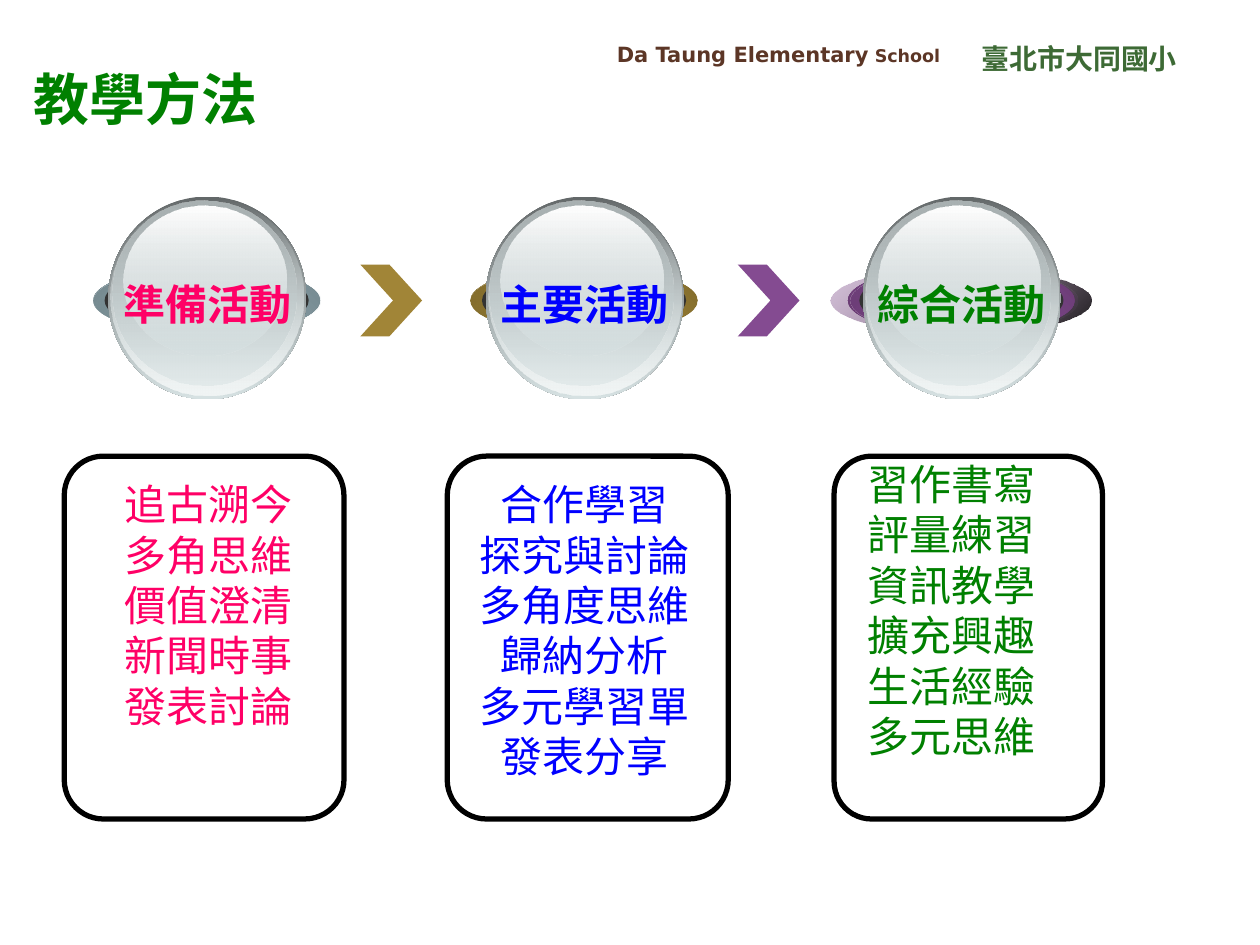
"""Build the teaching methods slide: three glossy stages above three panels of activities."""
from dataclasses import dataclass
from typing import NamedTuple

from lxml import etree
from pptx import Presentation
from pptx.dml.color import RGBColor
from pptx.enum.shapes import MSO_SHAPE
from pptx.enum.text import MSO_ANCHOR, MSO_AUTO_SIZE, PP_ALIGN
from pptx.oxml.ns import qn
from pptx.util import Inches, Pt

ELLIPSE, CHEVRON, ROUNDED = MSO_SHAPE.OVAL, MSO_SHAPE.CHEVRON, MSO_SHAPE.ROUNDED_RECTANGLE
LEFT, CENTER, RIGHT = PP_ALIGN.LEFT, PP_ALIGN.CENTER, PP_ALIGN.RIGHT
TOP, MIDDLE = MSO_ANCHOR.TOP, MSO_ANCHOR.MIDDLE
NO_FIT, GROW = MSO_AUTO_SIZE.NONE, MSO_AUTO_SIZE.SHAPE_TO_FIT_TEXT

COLUMNS, ROWS = 100, 75
SLIDE_WIDTH, SLIDE_HEIGHT = Inches(10), Inches(7.5)
STAGE_LEFT, STAGE_PITCH = 8.6, 29.95
RING_TOP, RING_HEIGHT = 21.2, 5.3
PANEL_TOP, PANEL_HEIGHT = 36.2, 28.8


@dataclass(frozen=True)
class Theme:
    """Colours, fonts and type sizes of the slide."""
    green: str = "008000"
    pink: str = "FF0066"
    blue: str = "0000FF"
    brown: str = "5C3626"
    moss: str = "3D6A35"
    gold: str = "A18537"
    purple: str = "844B91"
    steel: str = "90A8B0"
    glass: str = "D6E1E2"
    white: str = "FFFFFF"
    black: str = "000000"
    core: str = "333333"
    cjk: str = "Noto Sans CJK SC"
    sans: str = "DejaVu Sans"
    arial: str = "Arial"
    serif: str = "Times New Roman"
    title_size: int = 32
    body_size: int = 24
    school_size: int = 16
    english_size: int = 12
    small_size: int = 10
    leading: float = 1.2


THEME = Theme()


class Box(NamedTuple):
    """A place on the slide in grid columns and rows."""
    left: float
    top: float
    width: float
    height: float

    def lengths(self) -> tuple:
        """Return left, top, width and height in slide units."""
        across, down = SLIDE_WIDTH / COLUMNS, SLIDE_HEIGHT / ROWS
        return tuple(round(value * unit) for value, unit in zip(self, (across, down) * 2))


class Stop(NamedTuple):
    """A gradient stop with its place and opacity in percent."""
    place: int
    color: str
    opacity: int = 100


class Gradient(NamedTuple):
    """A linear gradient, its angle clockwise."""
    angle: int
    stops: tuple


class Run(NamedTuple):
    """A piece of text in one style."""
    text: str
    color: str
    size: int = THEME.body_size
    font: str = THEME.serif
    bold: bool = False


class Layer(NamedTuple):
    """An ellipse placed from the left edge of its stage."""
    offset: float
    top: float
    width: float
    height: float
    fill: object


class Stage(NamedTuple):
    """A teaching stage, its ring and its panel."""
    name: str
    ink: str
    accent: str
    dark: str
    shade: str
    halo: tuple
    halo_end: Stop
    shade_offset: float
    panel: tuple
    body: Box
    lines: tuple


STAGES = (
    Stage("準備活動", THEME.pink, THEME.steel, "6E8187", "768A90", (0.2, 2),
          Stop(100, THEME.black, 90), -1.2, (5.1, 22.2), Box(7.5, 37.5, 18.1, 21),
          (("追古溯今", THEME.serif), ("多角思維", THEME.serif), ("價值澄清", THEME.serif),
           ("新聞時事發表討論", THEME.serif))),
    Stage("主要活動", THEME.blue, THEME.gold, "7B662A", "846D2D", (0.2, 2),
          Stop(100, "735F27"), -1.2, (35.5, 22.3), Box(35, 37.5, 22.8, 25),
          (("合作學習", THEME.serif), ("探究與討論", THEME.serif), ("多角度思維", THEME.arial),
           ("歸納分析", THEME.arial), ("多元學習單", THEME.serif), ("發表分享", THEME.serif))),
    Stage("綜合活動", THEME.green, THEME.purple, "65396F", "6C3E77", (-2.6, 20.7),
          Stop(100, THEME.black, 90), -1, (66.2, 21.3), Box(67.3, 35.9, 16.4, 25),
          (("習作書寫", THEME.serif), ("評量練習", THEME.serif),
           ("資訊教學擴充興趣生活經驗", THEME.serif), ("多元思維", THEME.serif))),
)

GLASS_LAYERS = (
    Layer(0, 15.6, 15.7, 16.1, Gradient(90, (Stop(0, "636869"), Stop(100, THEME.glass)))),
    Layer(0.2, 15.7, 15.3, 15.7, Gradient(90, (Stop(0, THEME.glass, 0), Stop(100, "F1F5F5")))),
    Layer(0.3, 15.9, 14.6, 14.7, Gradient(90, (Stop(0, "AAB2B3"), Stop(100, THEME.glass, 48)))),
    Layer(1.2, 16.3, 12.9, 11.9, Gradient(90, (Stop(0, THEME.white), Stop(100, THEME.glass, 38)))),
)


def ring_layers(stage: Stage) -> tuple:
    """Return the coloured ellipses behind the glass of a stage."""
    accent, dark = stage.accent, stage.dark
    edge = Gradient(45, (Stop(0, THEME.white), Stop(50, accent), Stop(100, THEME.white)))
    halo = Gradient(45, (Stop(0, accent, 32), stage.halo_end))
    band = Gradient(315, (Stop(0, dark), Stop(50, accent), Stop(100, dark)))
    shade = Gradient(45, (Stop(0, stage.shade), Stop(100, accent, 0)))
    spans = ((0.2, 2, edge), (*stage.halo, halo), (-1.2, 18, band),
             (stage.shade_offset, 18, shade), (-0.3, 16.2, THEME.core))
    return tuple(Layer(offset, RING_TOP, width, RING_HEIGHT, fill) for offset, width, fill in spans)


def paint(shape, fill) -> None:
    """Fill a shape with a gradient, a plain colour or nothing."""
    if fill is None:
        shape.fill.background()
    elif isinstance(fill, Gradient):
        shape.fill.gradient()
        shape.fill.gradient_angle = (360 - fill.angle) % 360
        stop_list = shape._element.spPr.find(qn("a:gradFill")).find(qn("a:gsLst"))
        for old_stop in list(stop_list):
            stop_list.remove(old_stop)
        for stop in fill.stops:
            node = etree.SubElement(stop_list, qn("a:gs"), pos=str(stop.place * 1000))
            color = etree.SubElement(node, qn("a:srgbClr"), val=stop.color)
            etree.SubElement(color, qn("a:alpha"), val=str(stop.opacity * 1000))
    else:
        shape.fill.solid()
        shape.fill.fore_color.rgb = RGBColor.from_string(fill)


def draw_shape(slide, kind, box: Box, fill=None, line_width: float = 0, adjustment=None) -> None:
    """Draw a preset shape, outlined in black when it has a line width."""
    shape = slide.shapes.add_shape(kind, *box.lengths())
    shape.shadow.inherit = False
    paint(shape, fill)
    if line_width:
        shape.line.color.rgb = RGBColor.from_string(THEME.black)
        shape.line.width = Pt(line_width)
    else:
        shape.line.fill.background()
    if adjustment is not None:
        shape.adjustments[0] = adjustment


def draw_text(slide, box: Box, paragraphs, align=CENTER, anchor=TOP, wrap=True, fit=NO_FIT) -> None:
    """Draw a text box from paragraphs, each a sequence of runs."""
    frame = slide.shapes.add_textbox(*box.lengths()).text_frame
    for name, value in {"word_wrap": wrap, "auto_size": fit, "vertical_anchor": anchor}.items():
        setattr(frame, name, value)
    for index, runs in enumerate(paragraphs):
        paragraph = frame.add_paragraph() if index else frame.paragraphs[0]
        paragraph.alignment = align
        paragraph.line_spacing = Pt(runs[0].size * THEME.leading)
        for item in runs:
            run = paragraph.add_run()
            run.text = item.text
            for name, value in {"name": item.font, "size": Pt(item.size), "bold": item.bold}.items():
                setattr(run.font, name, value)
            run.font.color.rgb = RGBColor.from_string(item.color)
            etree.SubElement(run._r.get_or_add_rPr(), qn("a:ea"), typeface=THEME.cjk)


def draw_header(slide) -> None:
    """Draw the title and the school's two names."""
    title = Run("教學方法", THEME.green, THEME.title_size, THEME.cjk, True)
    english = (Run("Da Taung Elementary", THEME.brown, THEME.english_size, THEME.sans, True),
               Run(" School", THEME.brown, THEME.small_size, THEME.sans, True))
    school = Run("臺北市大同國小", THEME.moss, THEME.school_size, THEME.cjk, True)
    draw_text(slide, Box(1.7, 4.7, 84.2, 6.2), [[title]], LEFT, MIDDLE)
    draw_text(slide, Box(47.6, 2.8, 28, 3.5), [english], RIGHT)
    draw_text(slide, Box(75.2, 2.8, 19.2, 3.9), [[school]], RIGHT)


def draw_stage(slide, stage: Stage, left: float) -> None:
    """Draw one stage with its panel, ring, glass and texts."""
    panel_left, panel_width = stage.panel
    draw_shape(slide, ROUNDED, Box(panel_left, PANEL_TOP, panel_width, PANEL_HEIGHT),
               line_width=3, adjustment=0.14)
    for layer in ring_layers(stage) + GLASS_LAYERS:
        draw_shape(slide, ELLIPSE, Box(left + layer.offset, *layer[1:4]), layer.fill)
    label = Run(stage.name, stage.ink, font=THEME.cjk, bold=True)
    draw_text(slide, Box(left + 0.2, 21.6, 15.3, 5), [[label]], wrap=False, fit=GROW)
    draw_text(slide, stage.body, [[Run(text, stage.ink, font=font)] for text, font in stage.lines],
              fit=GROW)


def main() -> None:
    """Build and save the slide."""
    presentation = Presentation()
    presentation.slide_width, presentation.slide_height = SLIDE_WIDTH, SLIDE_HEIGHT
    slide = presentation.slides.add_slide(presentation.slide_layouts[6])
    draw_header(slide)
    for index, color in enumerate((THEME.gold, THEME.purple)):
        draw_shape(slide, CHEVRON, Box(28.6 + index * STAGE_PITCH, 21, 4.9, 5.7), color,
                   adjustment=0.53)
    for index, stage in enumerate(STAGES):
        draw_stage(slide, stage, STAGE_LEFT + index * STAGE_PITCH)
    presentation.save("out.pptx")


if __name__ == "__main__":
    main()
